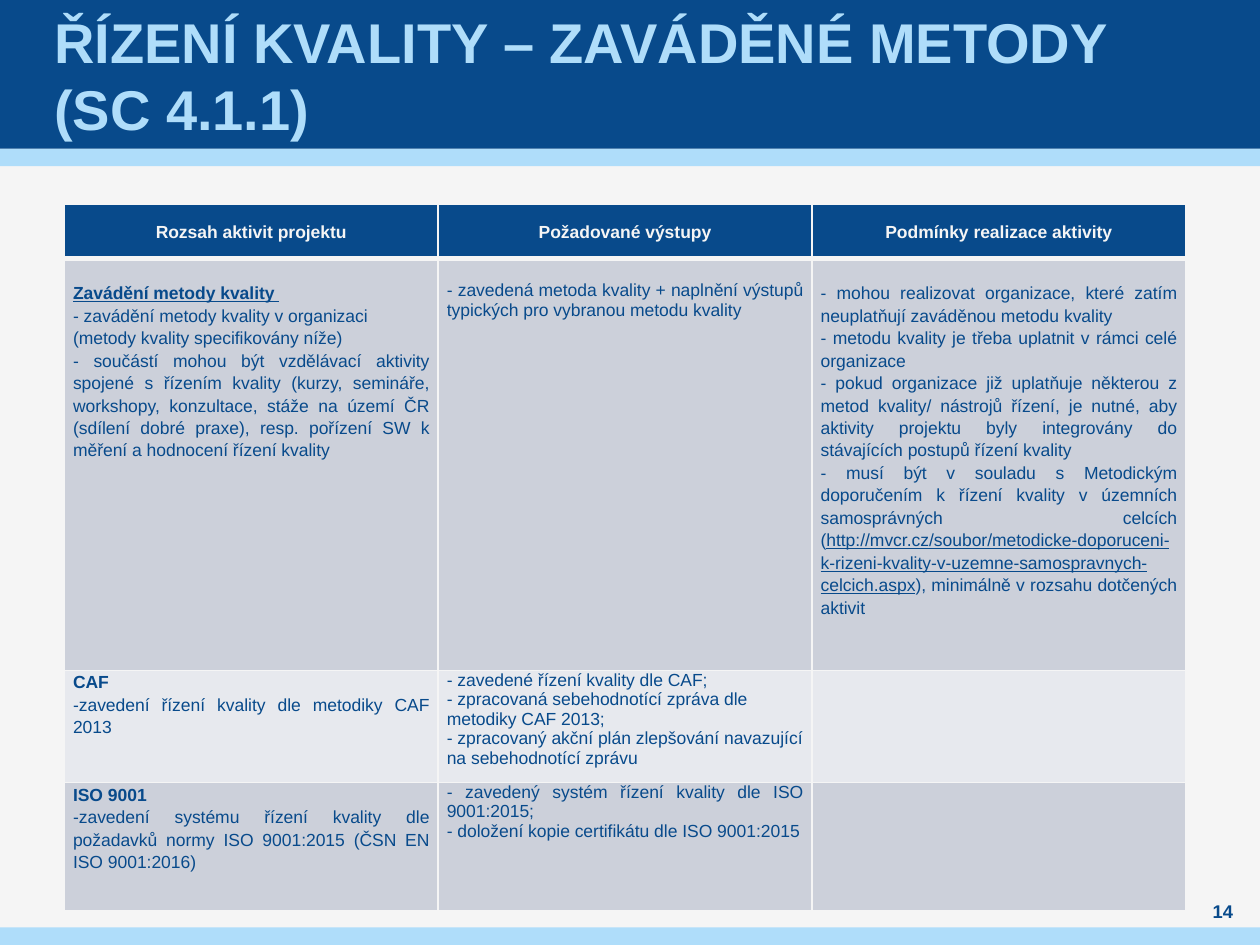
from dataclasses import dataclass

from lxml import etree
from pptx import Presentation
from pptx.dml.color import RGBColor
from pptx.enum.shapes import MSO_SHAPE
from pptx.enum.text import MSO_ANCHOR, PP_ALIGN
from pptx.oxml.ns import qn
from pptx.util import Inches, Pt


@dataclass(frozen=True)
class Theme:
    font: str = "Arial"
    navy: str = "084A8B"
    sky: str = "AFDDFA"
    paper: str = "F5F5F5"
    bands: tuple = ("CCD0DA", "E7E9EE")
    title: float = 32
    body: float = 10
    number: float = 10.5


LOOSE = {"line_spacing": 1.15}
LEFT = {"alignment": PP_ALIGN.LEFT}
JUSTIFIED = {"alignment": PP_ALIGN.JUSTIFY}
LEFT_LOOSE = LEFT | LOOSE
JUST_LOOSE = JUSTIFIED | LOOSE
CENTRED = {"alignment": PP_ALIGN.CENTER}
BOLD = {"bold": True}
UNDERLINED = {"underline": True}

HEADERS = ["Rozsah aktivit projektu", "Požadované výstupy", "Podmínky realizace aktivity"]

# Each cell is a list of paragraphs: (paragraph format, (text, run format), ...)
BODY = [
    [
        [
            (LEFT_LOOSE, ("Zavádění metody kvality ", BOLD | UNDERLINED)),
            (LEFT_LOOSE, ("- zavádění metody kvality v organizaci "
                          "(metody kvality specifikovány níže)", {})),
            (JUST_LOOSE, ("- součástí mohou být vzdělávací aktivity spojené s řízením kvality "
                          "(kurzy, semináře, workshopy, konzultace, stáže na území ČR (sdílení "
                          "dobré praxe), resp. pořízení SW k měření a hodnocení řízení kvality", {})),
        ],
        [
            (JUSTIFIED, ("- zavedená metoda kvality + naplnění výstupů typických "
                         "pro vybranou metodu kvality", {})),
        ],
        [
            (JUST_LOOSE, ("- mohou realizovat organizace, které zatím neuplatňují "
                          "zaváděnou metodu kvality", {})),
            (JUST_LOOSE, ("- metodu kvality je třeba uplatnit v rámci celé organizace", {})),
            (JUST_LOOSE, ("- pokud organizace již uplatňuje některou z metod kvality/ nástrojů "
                          "řízení, je nutné, aby aktivity projektu byly integrovány do "
                          "stávajících postupů řízení kvality", {})),
            (JUST_LOOSE, ("- musí být v souladu s Metodickým doporučením k řízení kvality "
                          "v územních samosprávných celcích (", {}),
             ("http://mvcr.cz/soubor/metodicke-doporuceni-k-rizeni-kvality-"
              "v-uzemne-samospravnych-celcich.aspx", UNDERLINED),
             ("), minimálně v rozsahu dotčených aktivit", {})),
        ],
    ],
    [
        [
            (JUST_LOOSE, ("CAF", BOLD)),
            (JUST_LOOSE, ("-zavedení řízení kvality dle metodiky CAF 2013", {})),
        ],
        [
            (LEFT, ("- zavedené řízení kvality dle CAF;", {})),
            (LEFT, ("- zpracovaná sebehodnotící zpráva dle metodiky CAF 2013;", {})),
            (LEFT, ("- zpracovaný akční plán zlepšování navazující na "
                    "sebehodnotící zprávu", {})),
        ],
        [],
    ],
    [
        [
            (JUST_LOOSE, ("ISO 9001", BOLD)),
            (JUST_LOOSE, ("-zavedení systému řízení kvality dle požadavků normy "
                          "ISO 9001:2015 (ČSN EN ISO 9001:2016)", {})),
        ],
        [
            (JUSTIFIED, ("- zavedený systém řízení kvality dle ISO 9001:2015;", {})),
            (JUSTIFIED, ("- doložení kopie certifikátu dle ISO 9001:2015", {})),
        ],
        [],
    ],
]


def set_values(target, values):
    for name, value in values.items():
        setattr(target, name, value)


def set_borders(cell, color, widths):
    """Draw cell borders; widths maps the sides L, R, T, B to points."""
    tcPr = cell._tc.get_or_add_tcPr()
    for side, width in widths.items():
        ln = etree.SubElement(tcPr, qn(f"a:ln{side}"), w=str(Pt(width)))
        fill = etree.SubElement(ln, qn("a:solidFill"))
        etree.SubElement(fill, qn("a:srgbClr"), val=color)


class Deck:
    def __init__(self, prs, theme):
        self.theme = theme
        self.s = prs.slides.add_slide(prs.slide_layouts[6])
        self.fill(self.s.background, theme.paper)

    def fill(self, target, color):
        target.fill.solid()
        target.fill.fore_color.rgb = RGBColor.from_string(color)

    def band(self, top, height, color):
        sp = self.s.shapes.add_shape(MSO_SHAPE.RECTANGLE, 0, Inches(top),
                                     Inches(10), Inches(height))
        sp.shadow.inherit = False
        sp.line.fill.background()
        self.fill(sp, color)

    def add_text(self, tf, paragraphs, size, color):
        for i, (layout, *runs) in enumerate(paragraphs):
            p = tf.add_paragraph() if i else tf.paragraphs[0]
            set_values(p, layout)
            for text, style in runs:
                r = p.add_run()
                r.text = text
                set_values(r.font, {"name": self.theme.font, "size": Pt(size), "bold": False} | style)
                r.font.color.rgb = RGBColor.from_string(color)

    def text_box(self, box, paragraphs, size, color, margin=0):
        tf = self.s.shapes.add_textbox(*map(Inches, box)).text_frame
        set_values(tf, {"word_wrap": True, "vertical_anchor": MSO_ANCHOR.MIDDLE,
                        "margin_left": Inches(margin), "margin_right": Inches(margin),
                        "margin_top": 0, "margin_bottom": 0})
        self.add_text(tf, paragraphs, size, color)

    def table(self, box, heights, headers, body):
        t = self.theme
        header = [[(CENTRED | LOOSE, (text, BOLD))] for text in headers]
        rows = [header, *body]
        table = self.s.shapes.add_table(len(rows), len(headers), *map(Inches, box)).table
        set_values(table, {"first_row": False, "horz_banding": False})
        for i, (height, row) in enumerate(zip(heights, rows)):
            table.rows[i].height = Inches(height)
            is_header = i == 0
            for j, paragraphs in enumerate(row):
                cell = table.cell(i, j)
                set_values(cell, {
                    "margin_left": Inches(0.07), "margin_right": Inches(0.07),
                    "margin_top": Inches(0.18 if i == 1 else 0), "margin_bottom": 0,
                    "vertical_anchor": MSO_ANCHOR.MIDDLE if is_header else MSO_ANCHOR.TOP,
                })
                set_borders(cell, t.paper, {"L": 1, "R": 1, "T": 3 if i == 1 else 1,
                                            "B": 3 if is_header else 1})
                self.fill(cell, t.navy if is_header else t.bands[(i - 1) % 2])
                self.add_text(cell.text_frame, paragraphs, t.body,
                              t.paper if is_header else t.navy)


def main():
    prs = Presentation()
    prs.slide_width, prs.slide_height = Inches(10), Inches(7.5)
    theme = Theme()
    deck = Deck(prs, theme)
    deck.band(1.18, 0.14, theme.sky)
    deck.band(0, 1.18, theme.navy)
    deck.band(7.36, 0.14, theme.sky)
    deck.text_box((0.39, 0, 9.21, 1.18),
                  [(LEFT, ("ŘÍZENÍ KVALITY – ZAVÁDĚNÉ METODY (SC 4.1.1)", BOLD))],
                  theme.title, theme.sky, margin=0.04)
    deck.table((0.51, 1.62, 8.9, 5.61), (0.43, 3.27, 0.89, 1.02), HEADERS, BODY)
    deck.text_box((9.45, 7.13, 0.51, 0.2), [(CENTRED, ("14", BOLD))], theme.number, theme.navy)
    prs.save("out.pptx")


if __name__ == "__main__":
    main()
